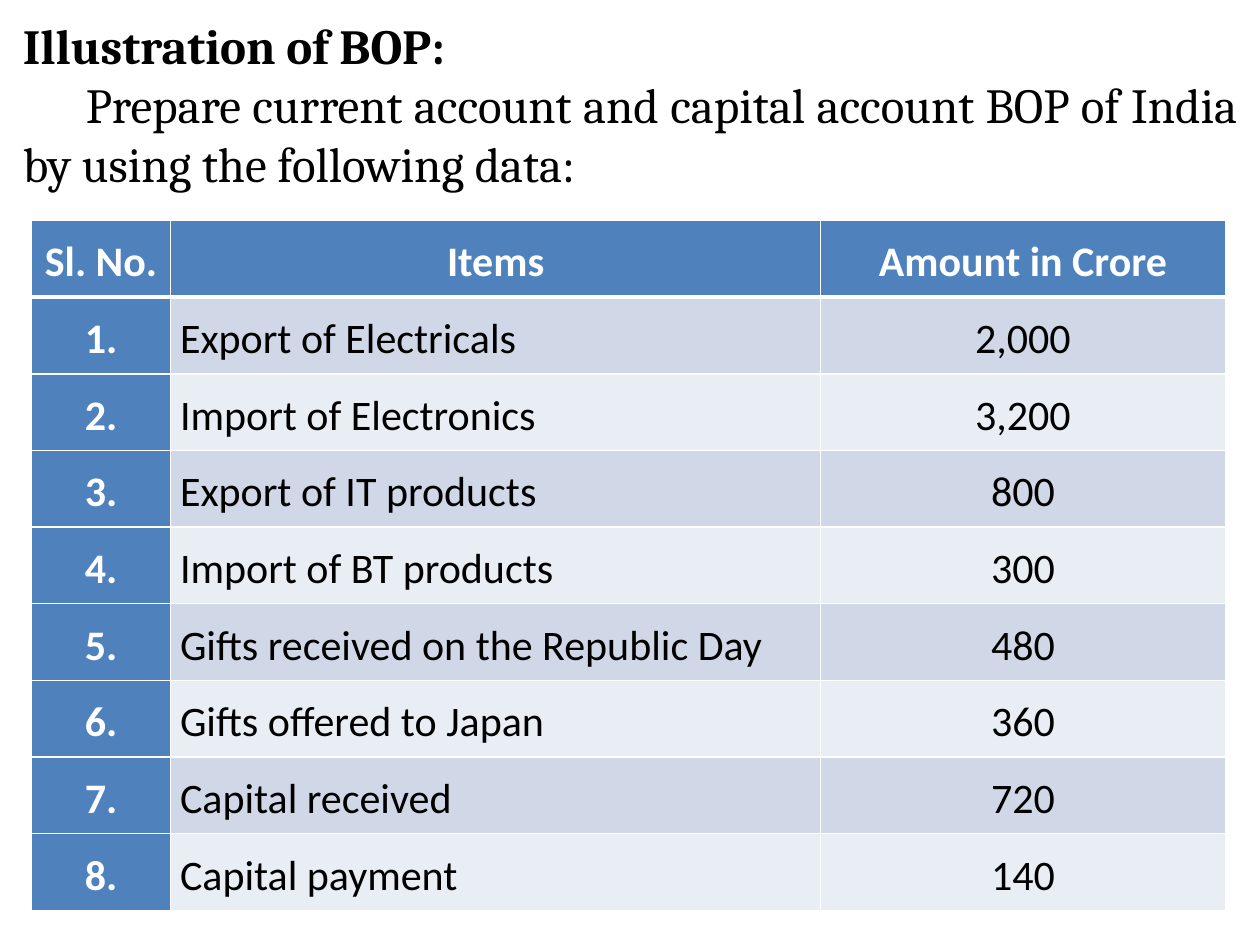
import pptx
import pptx.dml.color
import pptx.enum.text
import pptx.oxml
import pptx.oxml.ns
import pptx.util

Pt = pptx.util.Pt
Align = pptx.enum.text.PP_ALIGN
Anchor = pptx.enum.text.MSO_ANCHOR

COLOURS = {
    "text": "000000",
    "white": "FFFFFF",
    "header": "4F81BD",
    "odd": "D0D8E8",
    "even": "E9EDF4",
}
HEADINGS = ["Sl. No.", "Items", "Amount in Crore"]
ENTRIES = [
    ("Export of Electricals", "2,000"),
    ("Import of Electronics", "3,200"),
    ("Export of IT products", "800"),
    ("Import of BT products", "300"),
    ("Gifts received on the Republic Day", "480"),
    ("Gifts offered to Japan", "360"),
    ("Capital received", "720"),
    ("Capital payment", "140"),
]


class SlideBuilder:
    """Hold the style and the current slide, and add elements to it."""

    def __init__(self, page):
        self.page = page
        self.heading_font = "Cambria"
        self.table_font = "Calibri"

    def colour(self, name):
        return pptx.dml.color.RGBColor.from_string(COLOURS[name])

    def fill_para(self, para, text, font, size, colour, bold, align):
        para.text = text
        para.alignment = align
        para.font.name = font
        para.font.size = Pt(size)
        para.font.bold = bold
        para.font.color.rgb = self.colour(colour)

    def text(self, left, top, width, height, lines):
        box = self.page.shapes.add_textbox(Pt(left), Pt(top), Pt(width), Pt(height))
        frame = box.text_frame
        frame.word_wrap = True
        frame.auto_size = pptx.enum.text.MSO_AUTO_SIZE.SHAPE_TO_FIT_TEXT
        frame.vertical_anchor = Anchor.MIDDLE
        for index, (line, bold) in enumerate(lines):
            para = frame.add_paragraph() if index else frame.paragraphs[0]
            self.fill_para(para, line, self.heading_font, 28, "text", bold, Align.JUSTIFY)

    def border(self, cell, widths):
        properties = cell._tc.get_or_add_tcPr()
        for position, (side, width) in enumerate(widths.items()):
            line = pptx.oxml.parse_xml(
                f'<a:ln{side} {pptx.oxml.ns.nsdecls("a")} w="{Pt(width)}"><a:solidFill>'
                f'<a:srgbClr val="{COLOURS["white"]}"/></a:solidFill></a:ln{side}>'
            )
            properties.insert(position, line)

    def cell(self, cell, text, fill, colour, bold, align):
        cell.vertical_anchor = Anchor.MIDDLE
        cell.margin_left = cell.margin_right = Pt(5.4)
        cell.margin_top = cell.margin_bottom = Pt(0)
        cell.fill.solid()
        cell.fill.fore_color.rgb = self.colour(fill)
        para = cell.text_frame.paragraphs[0]
        para.line_spacing = 1.15
        self.fill_para(para, text, self.table_font, 24, colour, bold, align)

    def table(self, left, top, widths, row_height, rows):
        frame = self.page.shapes.add_table(
            len(rows), len(widths), Pt(left), Pt(top), Pt(sum(widths)), Pt(row_height * len(rows))
        )
        table = frame.table
        for column, width in zip(table.columns, widths):
            column.width = Pt(width)
        for r, values in enumerate(rows):
            table.rows[r].height = Pt(row_height)
            for c, value in enumerate(values):
                strong = r == 0 or c == 0
                fill = "header" if strong else "odd" if r % 2 else "even"
                align = Align.LEFT if r and c == 1 else Align.CENTER
                cell = table.cell(r, c)
                self.cell(cell, value, fill, "white" if strong else "text", strong, align)
                self.border(cell, {"L": 1, "R": 1, "T": 3 if r == 1 else 1, "B": 1 if r else 3})


def main():
    deck = pptx.Presentation()
    deck.slide_width, deck.slide_height = Pt(720), Pt(540)
    builder = SlideBuilder(deck.slides.add_slide(deck.slide_layouts[6]))
    rows = [HEADINGS] + [(f"{n}.", *entry) for n, entry in enumerate(ENTRIES, 1)]
    builder.table(18, 126, [79.5, 371.5, 231.25], 43.8, rows)
    builder.text(6, 5, 708, 109, [
        ("Illustration of BOP:", True),
        ("\tPrepare current account and capital account BOP of India by using the following data:", False),
    ])
    deck.save("out.pptx")


if __name__ == "__main__":
    main()
